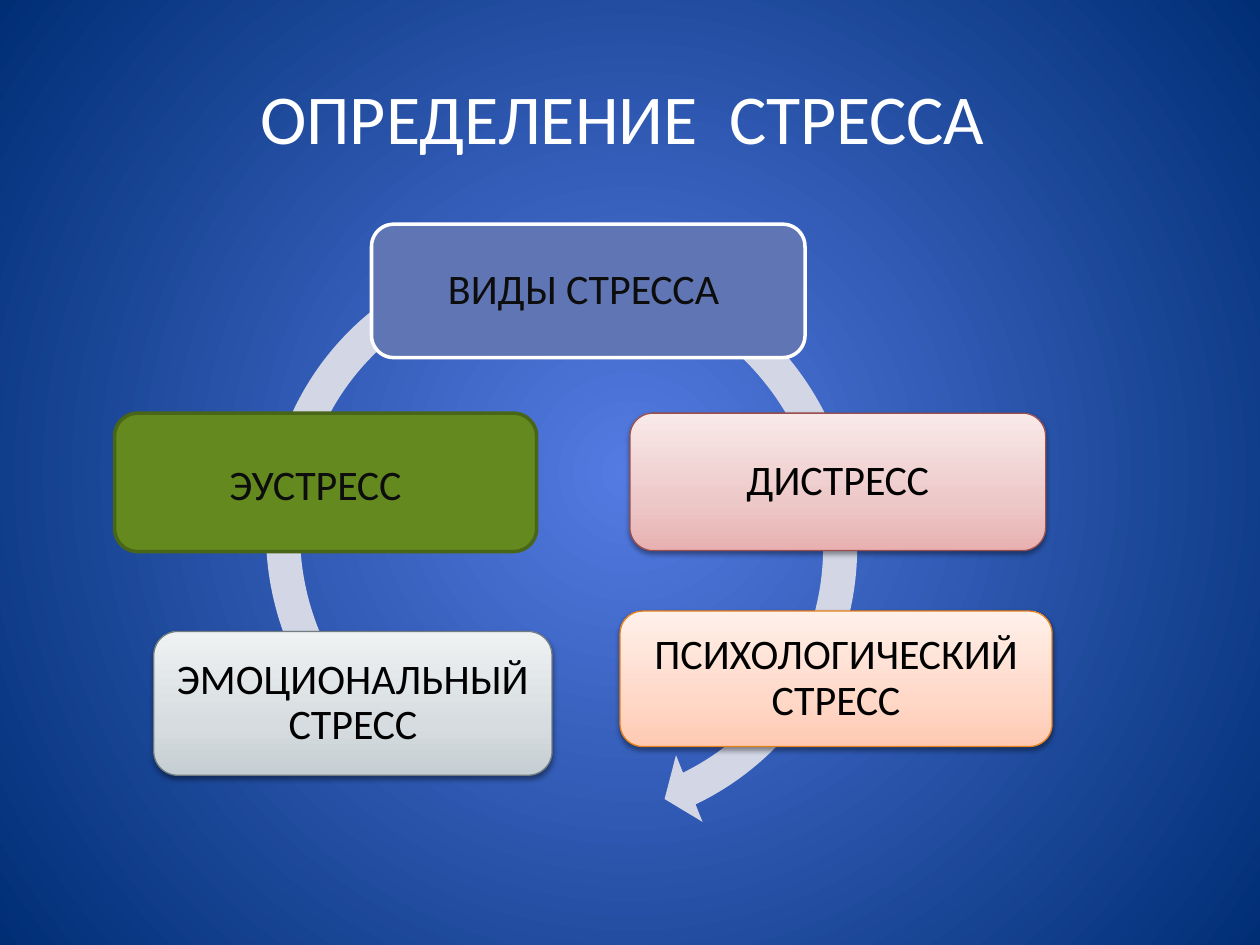
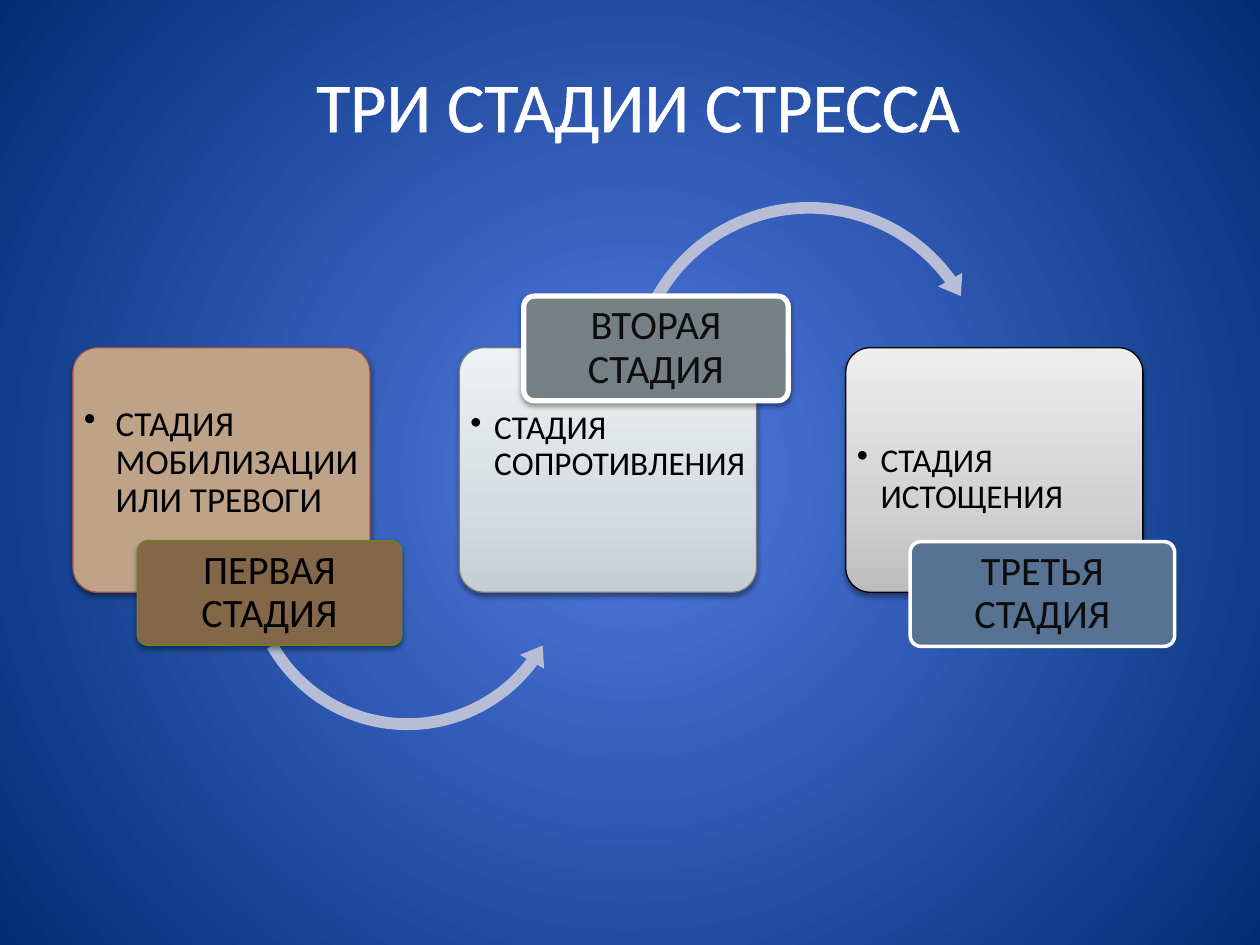
from lxml import etree
from pptx import Presentation
from pptx.dml.color import RGBColor
from pptx.enum.shapes import MSO_SHAPE
from pptx.enum.text import MSO_ANCHOR, PP_ALIGN
from pptx.oxml.ns import qn
from pptx.util import Cm, Pt

ROUND = MSO_SHAPE.ROUNDED_RECTANGLE
ARC = MSO_SHAPE.CIRCULAR_ARROW
LEFT_ARC = MSO_SHAPE.LEFT_CIRCULAR_ARROW
TOP, MIDDLE = MSO_ANCHOR.TOP, MSO_ANCHOR.MIDDLE
LEFT, CENTER = PP_ALIGN.LEFT, PP_ALIGN.CENTER

FONT = "Calibri"
WHITE = RGBColor(0xFF, 0xFF, 0xFF)
BLACK = RGBColor(0, 0, 0)
INK = RGBColor(0x0D, 0x0D, 0x0D)
GLOW = RGBColor(0x54, 0x7B, 0xE2)
NAVY = RGBColor(0x00, 0x2E, 0x75)
BLUE = RGBColor(0x60, 0x76, 0xB4)
STEEL = RGBColor(0x57, 0x72, 0x93)
GREEN = RGBColor(0x63, 0x89, 0x1F)
MOSS = RGBColor(0x49, 0x65, 0x17)
LEAF = RGBColor(0x62, 0x89, 0x1C)
RED = RGBColor(0x9A, 0x4E, 0x4E)
ORANGE = RGBColor(0xE6, 0x81, 0x1C)
SLATE = RGBColor(0x72, 0x7D, 0x82)
GRAY = RGBColor(0x75, 0x80, 0x85)
TAN = RGBColor(0xBE, 0xA3, 0x88)
BROWN = RGBColor(0x84, 0x66, 0x48)
MIST = RGBColor(0xD2, 0xD6, 0xE5)
LILAC = RGBColor(0xB7, 0xBD, 0xD6)
# Gradients run from the bottom up
ROSE = (RGBColor(0xE8, 0xB0, 0xB0), RGBColor(0xED, 0xC8, 0xC8), RGBColor(0xF9, 0xE9, 0xE9))
PEACH = (RGBColor(0xFF, 0xC9, 0xB1), RGBColor(0xFF, 0xD8, 0xC8), RGBColor(0xFF, 0xF0, 0xEA))
SILVER = (RGBColor(0xC5, 0xCE, 0xD2), RGBColor(0xD6, 0xDC, 0xDF), RGBColor(0xEF, 0xF2, 0xF3))
ASH = (RGBColor(0xBD, 0xBD, 0xBD), RGBColor(0xD1, 0xD1, 0xD1), RGBColor(0xEE, 0xEE, 0xEE))

TEXT = dict(size=24, color=BLACK, anchor=MIDDLE, align=CENTER, space=0.9,
            inset=(0.25, 0.25, 0.25, 0.25), bullet=0)
TITLE = dict(size=40, color=WHITE, space=1.0, inset=(0.25, 0.13, 0.25, 0.13))


def add(node, tag, **attrs):
    child = etree.SubElement(node, qn(tag))
    for name, value in attrs.items():
        child.set(name, str(value))
    return child


def blend(fill, owner, stops, radial=False):
    """Fill with a gradient; stops are (percent, colour) pairs."""
    fill.gradient()
    grad = owner.find(".//" + qn("a:gradFill"))
    grad.clear()
    stop_list = add(grad, "a:gsLst")
    for percent, color in stops:
        add(add(stop_list, "a:gs", pos=percent * 1000), "a:srgbClr", val=color)
    if radial:
        add(add(grad, "a:path", path="circle"), "a:fillToRect",
            l=50000, t=50000, r=50000, b=50000)
    else:
        add(grad, "a:lin", ang=270 * 60000, scaled=1)


def cast(shape):
    """Add a soft shadow below the shape."""
    effects = shape.element.spPr.find(qn("a:effectLst"))
    shadow = add(effects, "a:outerShdw", blurRad=Pt(3.1), dist=Pt(1.6),
                 dir=90 * 60000, rotWithShape=0)
    add(add(shadow, "a:srgbClr", val=BLACK), "a:alpha", val=38000)


def write(shape, text, **style):
    look = {**TEXT, **style}
    frame = shape.text_frame
    margins = zip(("left", "top", "right", "bottom"), look["inset"])
    values = {"margin_" + side: Cm(size) for side, size in margins}
    values.update(word_wrap=True, vertical_anchor=look["anchor"])
    for name, value in values.items():
        setattr(frame, name, value)
    para = frame.paragraphs[0]
    para.alignment = look["align"]
    para.line_spacing = look["space"]
    run = para.add_run()
    run.text = text
    for name, value in dict(name=FONT, size=Pt(look["size"])).items():
        setattr(run.font, name, value)
    run.font.color.rgb = look["color"]
    if look["bullet"]:
        props = para._p.get_or_add_pPr()
        props.set("marL", str(Cm(look["bullet"])))
        props.set("indent", str(-Cm(look["bullet"])))
        add(props, "a:buChar", char="•")
    return run


def form(slide, kind, at, fill, adjust=()):
    """Place a filled shape without line or shadow."""
    shape = slide.shapes.add_shape(kind, *map(Cm, at))
    shape.shadow.inherit = False
    shape.line.fill.background()
    for i, value in enumerate(adjust):
        shape.adjustments[i] = value
    if isinstance(fill, RGBColor):
        shape.fill.solid()
        shape.fill.fore_color.rgb = fill
    else:
        blend(shape.fill, shape.element, zip((0, 35, 100), fill))
    return shape


def box(slide, at, text, fill, line, width=0.75, shadow=True, adjust=(), **style):
    shape = form(slide, ROUND, at, fill, adjust)
    shape.line.color.rgb = line
    shape.line.width = Pt(width)
    if shadow:
        cast(shape)
    write(shape, text, **style)


def title(slide, at, text):
    frame = slide.shapes.add_textbox(*map(Cm, at))
    return write(frame, text, **TITLE)


def draw_kinds(slide):
    ring = form(slide, ARC, (4.93, 4.65, 12.78, 12.47), MIST,
                (0.055, 3.307, 124.679, 182.439, 0.058))
    ring.rotation = 215
    box(slide, (7.49, 4.52, 8.74, 2.69), "ВИДЫ СТРЕССА", BLUE, WHITE, 2, False,
        color=INK, inset=(0.25, 0.25, 0.44, 0.25))
    box(slide, (12.7, 8.33, 8.38, 2.77), "ДИСТРЕСС", ROSE, RED)
    box(slide, (12.5, 12.32, 8.71, 2.73), "ПСИХОЛОГИЧЕСКИЙ СТРЕСС", PEACH, ORANGE)
    box(slide, (3.1, 12.73, 8.03, 2.9), "ЭМОЦИОНАЛЬНЫЙ СТРЕСС", SILVER, SLATE)
    box(slide, (2.31, 8.33, 8.51, 2.79), "ЭУСТРЕСС", GREEN, MOSS, 2, False,
        color=INK, inset=(0.25, 0.45, 0.66, 0.25))
    title(slide, (1.27, 0.76, 22.54, 3.18), "ОПРЕДЕЛЕНИЕ  СТРЕССА")


def draw_stages(slide):
    # card text, fill, line, text size, indent, text top;
    # label text, top, format; arrow kind, place, adjustments
    stages = (
        (("СТАДИЯ МОБИЛИЗАЦИИ ИЛИ ТРЕВОГИ", TAN, RED, 20, 0.64, 1.04),
         ("ПЕРВАЯ СТАДИЯ", 10.9, dict(fill=BROWN, line=LEAF)),
         (LEFT_ARC, (4.8, 8.05, 6.83, 6.83), (0.035, 4.316, 22.071, 90.245, 0.041))),
        (("СТАДИЯ СОПРОТИВЛЕНИЯ", SILVER, SLATE, 19, 0.48, 1.12),
         ("ВТОРАЯ СТАДИЯ", 5.97, dict(fill=GRAY, line=WHITE, width=3, color=INK)),
         (ARC, (12.52, 3.91, 7.59, 7.59), (0.031, 3.849, 194.396, 125.755, 0.037))),
        (("СТАДИЯ ИСТОЩЕНИЯ", ASH, BLACK, 19, 0.48, 1.8),
         ("ТРЕТЬЯ СТАДИЯ", 10.92,
          dict(fill=STEEL, line=WHITE, width=2, shadow=False, color=INK)),
         None),
    )
    for i, (card, label, arrow) in enumerate(stages):
        left = 1.47 + 7.79 * i
        text, fill, line, size, indent, top = card
        box(slide, (left, 7.01, 5.99, 4.93), text, fill, line, adjust=(0.1,),
            size=size, bullet=indent, anchor=TOP, align=LEFT, inset=(0.08, top, 0, 0))
        if arrow:
            kind, at, adjust = arrow
            form(slide, kind, at, LILAC, adjust)
        name, top, look = label
        box(slide, (left + 1.3, top, 5.33, 2.11), name, adjust=(0.1,), size=23,
            inset=(0.13, 0.08, 0.13, 0.08), **look)
    run = title(slide, (5.89, 1.12, 13.94, 1.96), "ТРИ СТАДИИ СТРЕССА")
    props = run.font._element
    edge = add(props, "a:ln", w=Pt(1.45))
    add(add(edge, "a:solidFill"), "a:srgbClr", val=WHITE)
    props.insert(0, edge)


def main():
    deck = Presentation()
    deck.slide_width, deck.slide_height = Cm(25.4), Cm(19.05)
    master = deck.slide_master
    blend(master.background.fill, master.element, ((0, GLOW), (100, NAVY)), radial=True)
    for draw in (draw_kinds, draw_stages):
        draw(deck.slides.add_slide(deck.slide_layouts[6]))
    deck.save("out.pptx")


if __name__ == "__main__":
    main()
